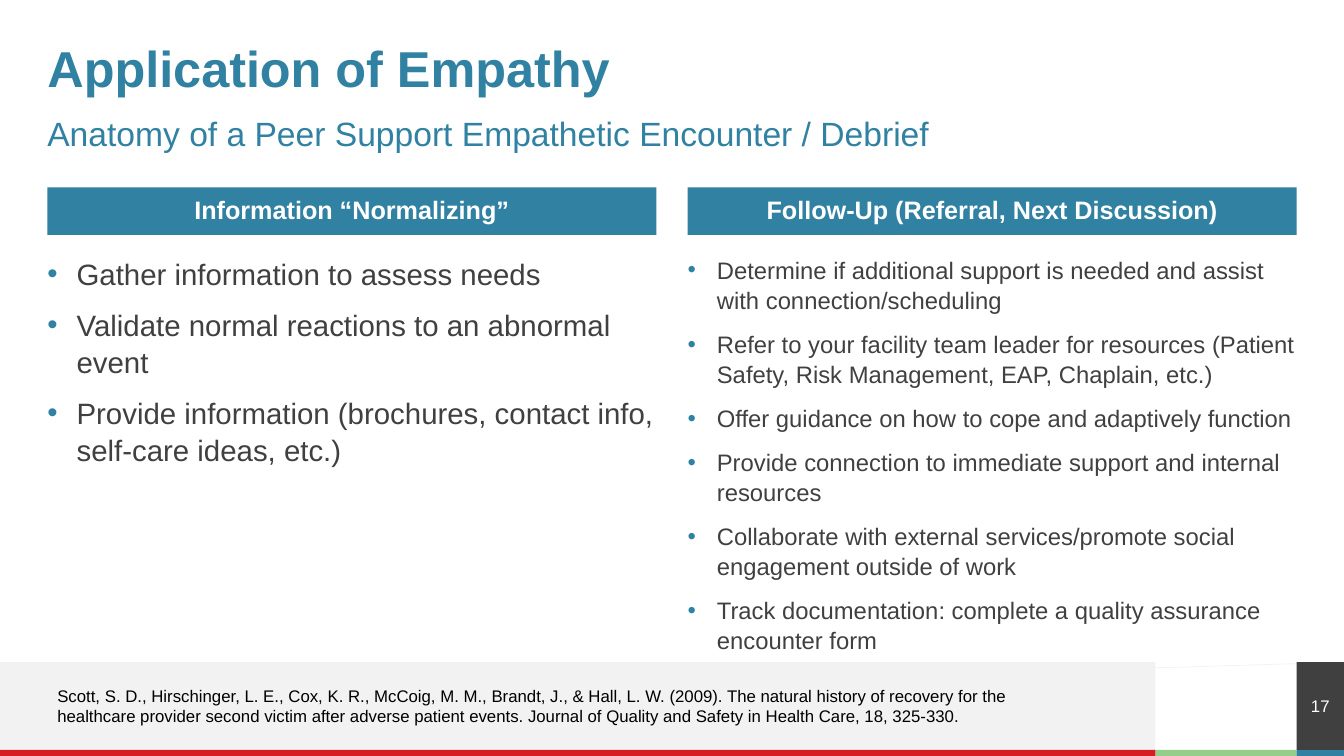
from pptx import Presentation
from pptx.dml.color import RGBColor
from pptx.enum.shapes import MSO_CONNECTOR, MSO_SHAPE
from pptx.enum.text import MSO_ANCHOR, PP_ALIGN
from pptx.oxml.ns import qn
from pptx.util import Inches, Pt
from lxml.etree import SubElement

COLORS = {"teal": "3081A2", "green": "95CD8B", "red": "D71D24",
          "pale": "F2F2F2", "dark": "404040", "white": "FFFFFF", "black": "000000"}
MARGIN, COL_W, COL_GAP = 0.47, 6.04, 0.31
FOOTER_TOP, FOOTER_H, FOOTER_W = 6.57, 0.87, 11.46
STRIP_TOP = FOOTER_TOP + FOOTER_H
PAGE_LEFT = 12.86


def add_box(left, top, width, height, fill):
    sp = slide.shapes.add_shape(MSO_SHAPE.RECTANGLE, Inches(left), Inches(top),
                                Inches(width), Inches(height))
    sp.shadow.inherit = False
    sp.fill.solid()
    sp.fill.fore_color.rgb = RGBColor.from_string(COLORS[fill])
    sp.line.fill.background()
    return sp


def set_text(sp, lines, size, color, bold=False, align=PP_ALIGN.LEFT,
             anchor=MSO_ANCHOR.TOP, spacing=1.0, inset=(0, 0), bullets=False):
    """Fill a shape with formatted paragraphs; inset is (horizontal, vertical) inches."""
    tf = sp.text_frame
    tf.word_wrap = True
    tf.vertical_anchor = anchor
    tf.margin_left = tf.margin_right = Inches(inset[0])
    tf.margin_top = tf.margin_bottom = Inches(inset[1])
    for i, line in enumerate(lines):
        p = tf.paragraphs[0] if i == 0 else tf.add_paragraph()
        p.text = line
        p.alignment = align
        p.line_spacing = spacing
        if i:
            p.space_before = Pt(10)
        if bullets:
            pPr = p._p.get_or_add_pPr()
            pPr.set("marL", str(Inches(0.29)))
            pPr.set("indent", str(-Inches(0.29)))
            clr = SubElement(pPr, qn("a:buClr"))
            SubElement(clr, qn("a:srgbClr"), val=COLORS["teal"])
            SubElement(pPr, qn("a:buFont"), typeface="Arial")
            SubElement(pPr, qn("a:buChar"), char="•")
        r = p.runs[0]
        r.font.name = "Arial"
        r.font.size = Pt(size)
        r.font.bold = bold
        r.font.color.rgb = RGBColor.from_string(COLORS[color])


prs = Presentation()
prs.slide_width, prs.slide_height = Inches(13.33), Inches(7.5)
slide = prs.slides.add_slide(prs.slide_layouts[6])

# Footer band and coloured strip
add_box(FOOTER_W, STRIP_TOP, PAGE_LEFT - FOOTER_W, 0.07, "green")
add_box(0, FOOTER_TOP, FOOTER_W, FOOTER_H, "pale")
add_box(0, STRIP_TOP, FOOTER_W, 0.07, "red")
add_box(PAGE_LEFT, STRIP_TOP, 0.47, 0.06, "teal")
line = slide.shapes.add_connector(MSO_CONNECTOR.STRAIGHT, Inches(13.33), Inches(FOOTER_TOP),
                                  Inches(0), Inches(6.97))
line.line.color.rgb = RGBColor.from_string(COLORS["pale"])
line.line.width = Pt(0.5)
SubElement(line._element.spPr, qn("a:effectLst"))
page = add_box(PAGE_LEFT, FOOTER_TOP, 0.47, FOOTER_H, "dark")
set_text(page, ["17"], 12, "white", align=PP_ALIGN.CENTER, anchor=MSO_ANCHOR.MIDDLE)

# Title, subtitle and reference
title = slide.shapes.add_textbox(Inches(MARGIN), Inches(0.47), Inches(12.39), Inches(0.47))
set_text(title, ["Application of Empathy"], 36, "teal", bold=True,
         anchor=MSO_ANCHOR.MIDDLE, spacing=0.9)
subtitle = slide.shapes.add_textbox(Inches(MARGIN), Inches(1.1), Inches(12.4), Inches(0.39))
set_text(subtitle, ["Anatomy of a Peer Support Empathetic Encounter / Debrief"],
         24, "teal", spacing=1.05)
reference = slide.shapes.add_textbox(Inches(MARGIN), Inches(6.67), Inches(10), Inches(0.67))
set_text(reference, [
    "Scott, S. D., Hirschinger, L. E., Cox, K. R., McCoig, M. M., Brandt, J., & Hall, L. W. "
    "(2009). The natural history of recovery for the healthcare provider second victim after "
    "adverse patient events. Journal of Quality and Safety in Health Care, 18, 325-330."],
    12, "black", anchor=MSO_ANCHOR.MIDDLE, inset=(0.1, 0.05))

# Two columns: heading bar above a bulleted list
columns = [
    ("Information “Normalizing”", 21, [
        "Gather information to assess needs",
        "Validate normal reactions to an abnormal event",
        "Provide information (brochures, contact info, self-care ideas, etc.)"]),
    ("Follow-Up (Referral, Next Discussion)", 17, [
        "Determine if additional support is needed and assist with connection/scheduling",
        "Refer to your facility team leader for resources (Patient Safety, Risk Management, "
        "EAP, Chaplain, etc.)",
        "Offer guidance on how to cope and adaptively function",
        "Provide connection to immediate support and internal resources",
        "Collaborate with external services/promote social engagement outside of work",
        "Track documentation: complete a quality assurance encounter form"]),
]
for i, (heading, size, items) in enumerate(columns):
    left = MARGIN + i * (COL_W + COL_GAP)
    bar = add_box(left, 1.86, COL_W, 0.47, "teal")
    set_text(bar, [heading], 18, "white", bold=True, align=PP_ALIGN.CENTER,
             anchor=MSO_ANCHOR.MIDDLE, spacing=0.9)
    body = slide.shapes.add_textbox(Inches(left), Inches(2.52), Inches(COL_W), Inches(3.66))
    set_text(body, items, size, "dark", spacing=1.05, bullets=True)

prs.save("out.pptx")
